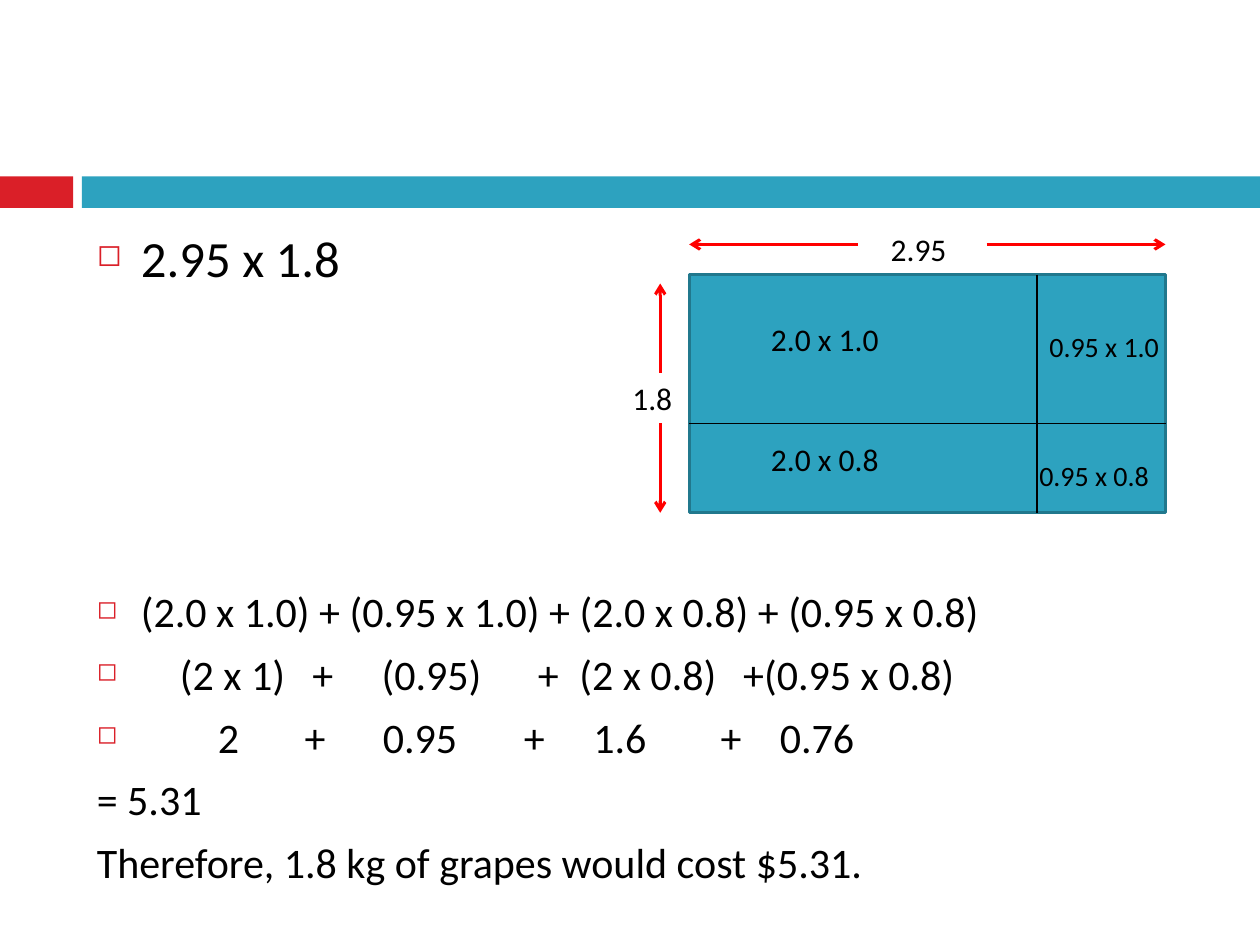
from lxml import etree
from pptx import Presentation
from pptx.dml.color import RGBColor
from pptx.enum.shapes import MSO_CONNECTOR, MSO_SHAPE
from pptx.oxml.ns import qn
from pptx.util import Inches, Pt

RECT = MSO_SHAPE.RECTANGLE
STRAIGHT = MSO_CONNECTOR.STRAIGHT
FONT = "Calibri"
COLORS = {"red": "DA1F28", "teal": "2DA2BF", "edge": "21788D",
          "arrow": "FF0000", "text": "000000"}

BANDS = [(0, 0.58, "red"), (0.65, 9.35, "teal")]

# text, size, space before, bulleted, tab stops
LINES = [
    ("2.95 x 1.8", 29, 7, True, []),
    ("(2.0 x 1.0) + (0.95 x 1.0) + (2.0 x 0.8) + (0.95 x 0.8)", 24, 170.5, True, []),
    ("\t(2 x 1)\t+\t(0.95)\t+\t(2 x 0.8)\t+(0.95 x 0.8)", 24, 7, True,
     [0.66, 1.71, 2.26, 3.5, 3.83, 5.13]),
    ("\t2\t+\t0.95\t+\t1.6\t+\t0.76", 24, 7, True,
     [0.96, 1.65, 2.27, 3.39, 3.94, 4.95, 5.42]),
    ("= 5.31", 24, 7, False, []),
    ("Therefore, 1.8 kg of grapes would cost $5.31.", 24, 7, False, []),
]

LEFT, TOP, WIDTH, HEIGHT = 5.47, 2.18, 3.78, 1.89
RIGHT, BOTTOM = LEFT + WIDTH, TOP + HEIGHT
SPLIT_X, SPLIT_Y = 8.23, 3.36
ARROW_X, ARROW_Y = 5.24, 1.94

DIVIDERS = [(SPLIT_X, TOP, SPLIT_X, BOTTOM), (LEFT, SPLIT_Y, RIGHT, SPLIT_Y)]
ARROWS = [
    (7.83, ARROW_Y, RIGHT, ARROW_Y),
    (6.81, ARROW_Y, LEFT, ARROW_Y),
    (ARROW_X, SPLIT_Y, ARROW_X, BOTTOM),
    (ARROW_X, 2.96, ARROW_X, 2.25),
]
LABELS = [
    ("2.0 x 1.0", 6.02, 2.49, 1.42, 0.4, 18),
    ("0.95 x 1.0", 8.23, 2.57, 1.18, 0.37, 16),
    ("2.0 x 0.8", 6.02, 3.44, 1.73, 0.4, 18),
    ("0.95 x 0.8", 8.15, 3.59, 1.26, 0.37, 16),
    ("2.95", 6.97, 1.78, 0.79, 0.4, 18),
    ("1.8", 4.92, 2.96, 0.71, 0.4, 18),
]


def rgb(name):
    return RGBColor.from_string(COLORS[name])


def add_rect(s, x, y, w, h, fill, edge=None):
    sp = s.shapes.add_shape(RECT, Inches(x), Inches(y), Inches(w), Inches(h))
    sp.shadow.inherit = False
    sp.fill.solid()
    sp.fill.fore_color.rgb = rgb(fill)
    if edge:
        sp.line.color.rgb = rgb(edge)
        sp.line.width = Pt(1.5)
    else:
        sp.line.fill.background()


def add_line(s, ends, color, width, arrow=False):
    c = s.shapes.add_connector(STRAIGHT, *map(Inches, ends))
    c.line.color.rgb = rgb(color)
    c.line.width = Pt(width)
    if arrow:
        etree.SubElement(c.line._get_or_add_ln(), qn("a:tailEnd"), type="arrow")
    etree.SubElement(c._element.spPr, qn("a:effectLst"))


def add_text_frame(s, x, y, w, h):
    tf = s.shapes.add_textbox(Inches(x), Inches(y), Inches(w), Inches(h)).text_frame
    tf.word_wrap = True
    return tf


def write(p, text, size):
    p.text = text
    p.font.name = FONT
    p.font.size = Pt(size)
    p.font.color.rgb = rgb("text")


def format_line(p, bulleted, tabs):
    pPr = p._p.get_or_add_pPr()
    indent = 0 if tabs or not bulleted else Inches(0.35)
    pPr.set("marL", str(indent))
    pPr.set("indent", str(-indent))
    parts = []
    if bulleted:
        color = etree.Element(qn("a:buClr"))
        etree.SubElement(color, qn("a:srgbClr"), val=COLORS["red"])
        parts += [color, etree.Element(qn("a:buSzPct"), val="60000"),
                  etree.Element(qn("a:buChar"), char="◻")]
    if tabs:
        stops = etree.Element(qn("a:tabLst"))
        for pos in tabs:
            etree.SubElement(stops, qn("a:tab"), pos=str(Inches(pos)), algn="l")
        parts.append(stops)
    defaults = pPr.find(qn("a:defRPr"))
    for part in parts:
        defaults.addprevious(part)


def main():
    prs = Presentation()
    prs.slide_width, prs.slide_height = Inches(10), Inches(7.5)
    s = prs.slides.add_slide(prs.slide_layouts[6])

    for x, w, color in BANDS:
        add_rect(s, x, 1.4, w, 0.25, color)

    tf = add_text_frame(s, 0.67, 1.75, 8.92, 5.54)
    for i, (text, size, before, bulleted, tabs) in enumerate(LINES):
        p = tf.add_paragraph() if i else tf.paragraphs[0]
        write(p, text, size)
        p.space_before = Pt(before)
        format_line(p, bulleted, tabs)

    add_rect(s, LEFT, TOP, WIDTH, HEIGHT, "teal", "edge")
    for ends in DIVIDERS:
        add_line(s, ends, "text", 0.79)
    for ends in ARROWS:
        add_line(s, ends, "arrow", 1.75, arrow=True)
    for text, x, y, w, h, size in LABELS:
        write(add_text_frame(s, x, y, w, h).paragraphs[0], text, size)

    prs.save("out.pptx")


if __name__ == "__main__":
    main()
